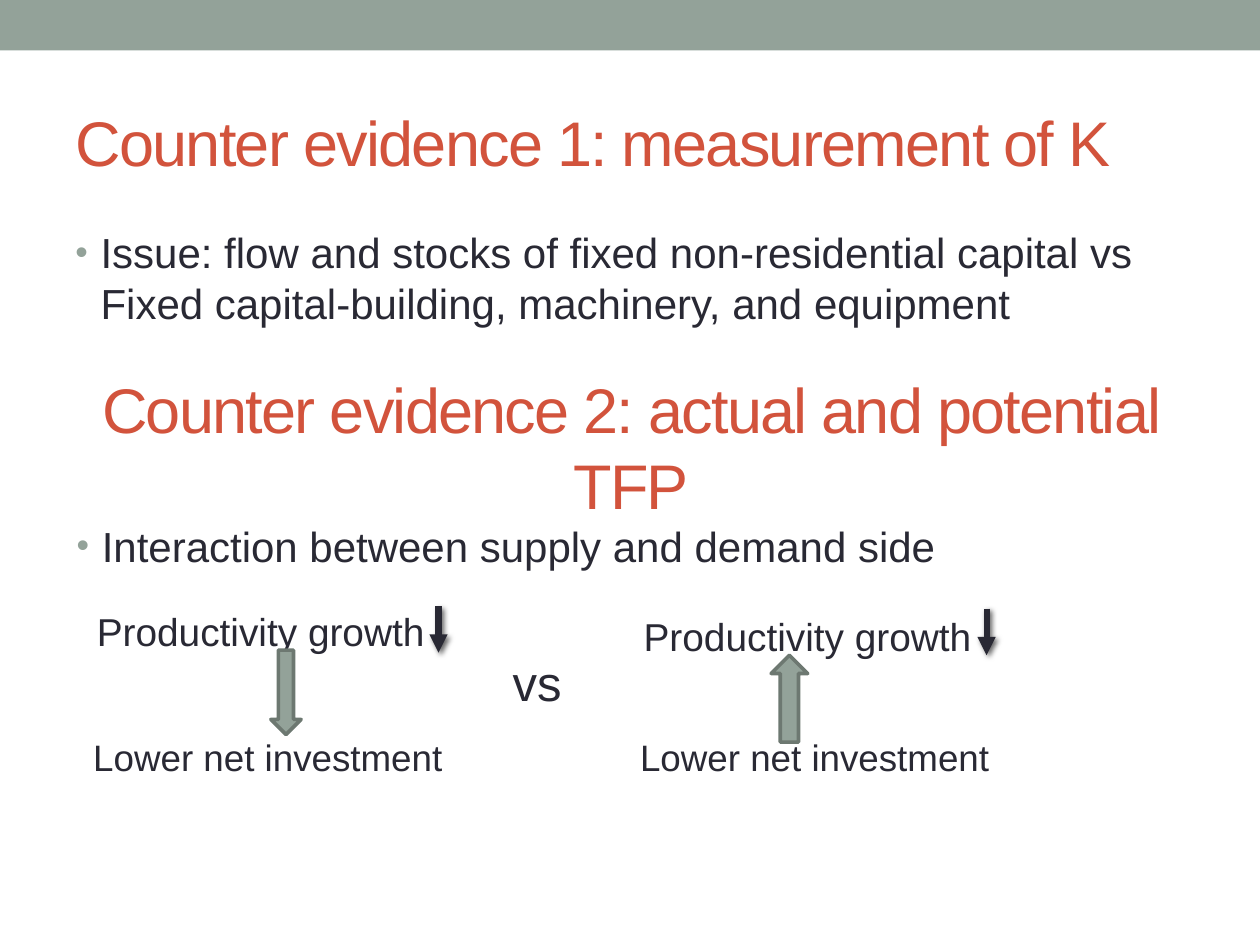
from lxml.etree import SubElement
from pptx import Presentation
from pptx.dml.color import RGBColor
from pptx.enum.shapes import MSO_CONNECTOR, MSO_SHAPE
from pptx.enum.text import MSO_ANCHOR, MSO_AUTO_SIZE, PP_ALIGN
from pptx.oxml.ns import qn
from pptx.util import Inches, Pt

COLORS = {"sage": "93A299", "edge": "6D7871", "red": "D2533C", "ink": "292934", "shadow": "000000"}

TITLE = ("Counter evidence 1: measurement of K", (0.5, 0.58, 9, 1.08))
SUBTITLE = ("Counter evidence 2: actual and potential TFP", (0.22, 3, 9.58, 1.08))
BULLETS = [
    ("Issue: flow and stocks of fixed non-residential capital vs "
     "Fixed capital-building, machinery, and equipment", (0.5, 1.75, 9, 1.25)),
    ("Interaction between supply and demand side", (0.51, 4.08, 9, 1.25)),
]
CAUSE, EFFECT, VERSUS = "Productivity growth", "Lower net investment", "vs"
CHAINS = [
    {"left": 0.67, "top": 4.77, "decline": (3.48, 4.81),
     "arrow": (MSO_SHAPE.DOWN_ARROW, (2.15, 5.16, 0.24, 0.67), 0)},
    {"left": 5.01, "top": 4.81, "decline": (7.83, 4.83),
     "arrow": (MSO_SHAPE.RIGHT_ARROW, (5.92, 5.4, 0.69, 0.29), 270)},
]


def color(name):
    """Return a named colour."""
    return RGBColor.from_string(COLORS[name])


def write(shape, text, size, color_name="ink", align=PP_ALIGN.LEFT, before=0):
    """Fill a shape with one formatted paragraph and return the paragraph."""
    frame = shape.text_frame
    frame.word_wrap = True
    frame.auto_size = MSO_AUTO_SIZE.NONE
    paragraph = frame.paragraphs[0]
    paragraph.text = text
    paragraph.alignment = align
    paragraph.space_before = Pt(before)
    paragraph.font.name = "Arial"
    paragraph.font.size = Pt(size)
    paragraph.font.color.rgb = color(color_name)
    return paragraph


def add_text(slide, box, text, size, **style):
    """Add a text box and return it with its paragraph."""
    shape = slide.shapes.add_textbox(*map(Inches, box))
    return shape, write(shape, text, size, **style)


def write_heading(shape, text, align):
    """Write a tightly spaced red heading."""
    paragraph = write(shape, text, 36, "red", align)
    shape.text_frame.vertical_anchor = MSO_ANCHOR.MIDDLE
    paragraph.runs[0].font._element.set("spc", "-100")


def add_bullet(slide, text, box):
    """Add a bulleted statement."""
    properties = add_text(slide, box, text, 24, before=4.8)[1]._p.get_or_add_pPr()
    properties.set("marL", str(Inches(0.2)))
    properties.set("indent", str(Inches(-0.2)))
    bullet = [("buClr", {}), ("buSzPct", {"val": "85000"}),
              ("buFont", {"typeface": "Arial"}), ("buChar", {"char": "•"})]
    elements = [properties.makeelement(qn(f"a:{tag}"), values) for tag, values in bullet]
    SubElement(elements[0], qn("a:srgbClr"), val=COLORS["sage"])
    default_run = properties.find(qn("a:defRPr"))
    for element in elements:
        default_run.addprevious(element)


def add_block(slide, kind, box, rotation=0):
    """Add a sage shape without an outline."""
    shape = slide.shapes.add_shape(kind, *map(Inches, box))
    shape.shadow.inherit = False
    shape.fill.solid()
    shape.fill.fore_color.rgb = color("sage")
    shape.line.fill.background()
    shape.rotation = rotation
    return shape


def add_decline(slide, left, top):
    """Add a short shadowed arrow pointing down."""
    arrow = slide.shapes.add_connector(
        MSO_CONNECTOR.STRAIGHT, *map(Inches, (left, top, left, top + 0.37)))
    arrow.line.color.rgb = color("ink")
    arrow.line.width = Pt(3.5)
    SubElement(arrow.line._get_or_add_ln(), qn("a:tailEnd"), type="triangle")
    effects = SubElement(arrow._element.spPr, qn("a:effectLst"))
    shadow = SubElement(effects, qn("a:outerShdw"), blurRad=str(Pt(3)), dist=str(Pt(2)),
                        dir="2700000", rotWithShape="0")
    shade = SubElement(shadow, qn("a:srgbClr"), val=COLORS["shadow"])
    SubElement(shade, qn("a:alpha"), val="60000")


def add_chain(slide, chain):
    """Add a cause and an effect joined by a block arrow."""
    add_text(slide, (chain["left"], chain["top"], 2.96, 0.45), CAUSE, 22.2, before=4.44)
    effect, paragraph = add_text(slide, (chain["left"], 5.83, 3.73, 0.45), EFFECT, 21, before=10)
    paragraph.line_spacing = 0.9
    frame = effect.text_frame
    frame.margin_left = frame.margin_right = Inches(0.07)
    frame.margin_top = frame.margin_bottom = Inches(0.04)
    arrow = add_block(slide, *chain["arrow"])
    arrow.line.color.rgb = color("edge")
    arrow.line.width = Pt(2.08)
    add_decline(slide, *chain["decline"])


def main():
    """Build the slide on counter evidence."""
    presentation = Presentation()
    presentation.slide_width, presentation.slide_height = Inches(10), Inches(7.5)
    slide = presentation.slides.add_slide(presentation.slide_layouts[5])
    add_block(slide, MSO_SHAPE.RECTANGLE, (0, 0, 10, 0.4))

    text, box = TITLE
    title = slide.shapes.title
    title.left, title.top, title.width, title.height = map(Inches, box)
    write_heading(title, text, PP_ALIGN.LEFT)

    text, box = SUBTITLE
    subtitle = slide.shapes.add_textbox(*map(Inches, box))
    write_heading(subtitle, text, PP_ALIGN.CENTER)

    for text, box in BULLETS:
        add_bullet(slide, text, box)
    for chain in CHAINS:
        add_chain(slide, chain)
    add_text(slide, (3.97, 5.13, 1, 0.57), VERSUS, 28)
    presentation.save("out.pptx")


if __name__ == "__main__":
    main()
